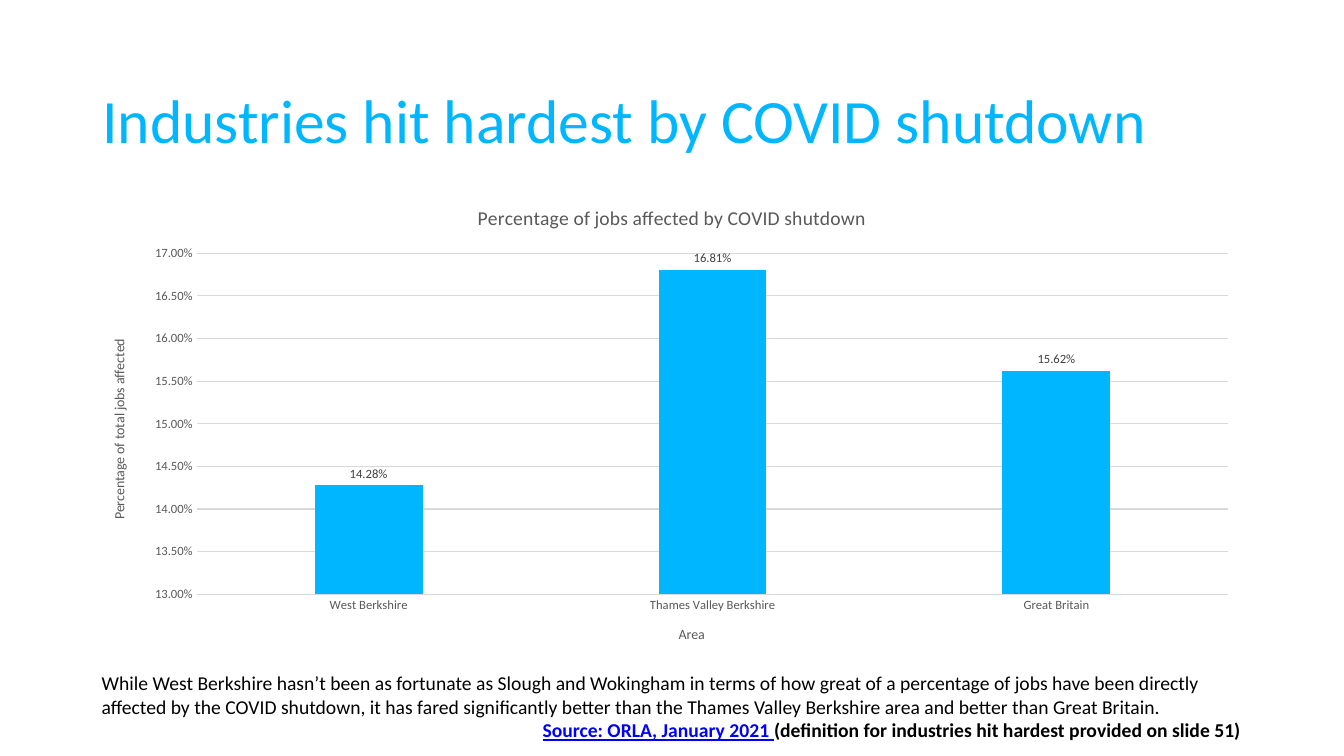
from dataclasses import dataclass

import lxml.etree
import pptx
import pptx.chart.axis
import pptx.chart.chart
import pptx.chart.data
import pptx.dml.color
import pptx.enum.chart
import pptx.enum.text
import pptx.oxml
import pptx.oxml.ns
import pptx.slide
import pptx.text.text
import pptx.util

COLOURS = {
    "accent": "00B7FF",
    "body": "000000",
    "link": "0000FF",
    "axis": "595959",
    "label": "404040",
    "grid": "D9D9D9",
}
FONT_NAME = "Calibri"
PERCENT_FORMAT = "0.00%"
JOBS_AFFECTED = {
    "West Berkshire": 0.1428,
    "Thames Valley Berkshire": 0.1681,
    "Great Britain": 0.1562,
}


@dataclass
class Box:
    left: float
    top: float
    width: float
    height: float

    def lengths(self) -> list[pptx.util.Length]:
        return [pptx.util.Pt(value) for value in (self.left, self.top, self.width, self.height)]


def colour(name: str) -> pptx.dml.color.RGBColor:
    return pptx.dml.color.RGBColor.from_string(COLOURS[name])


def format_font(
    font: pptx.text.text.Font, *, size: float, color: str, bold: bool = False, underline: bool = False
) -> None:
    font.name = FONT_NAME
    font.size = pptx.util.Pt(size)
    font.bold = bold
    font.underline = underline
    font.color.rgb = colour(color)


def add_text(paragraph, text: str, **formatting) -> None:
    run = paragraph.add_run()
    run.text = text
    format_font(run.font, **formatting)


def add_text_frame(
    slide: pptx.slide.Slide, box: Box, anchor: pptx.enum.text.MSO_ANCHOR
) -> pptx.text.text.TextFrame:
    text_frame = slide.shapes.add_textbox(*box.lengths()).text_frame
    text_frame.word_wrap = True
    text_frame.vertical_anchor = anchor
    return text_frame


def style_axis(axis: pptx.chart.axis._BaseAxis, title: str) -> None:
    axis.major_tick_mark = pptx.enum.chart.XL_TICK_MARK.NONE
    axis.minor_tick_mark = pptx.enum.chart.XL_TICK_MARK.NONE
    format_font(axis.tick_labels.font, size=9, color="axis")
    add_text(axis.axis_title.text_frame.paragraphs[0], title, size=10, color="axis")


def style_line(line, color: str) -> None:
    line.color.rgb = colour(color)
    line.width = pptx.util.Pt(0.75)


def place_plot_area(chart: pptx.chart.chart.Chart, **fractions: float) -> None:
    plot_area = chart.element.chart.plotArea
    for old_layout in plot_area.findall(pptx.oxml.ns.qn("c:layout")):
        plot_area.remove(old_layout)
    layout = lxml.etree.Element(pptx.oxml.ns.qn("c:layout"))
    manual = lxml.etree.SubElement(layout, pptx.oxml.ns.qn("c:manualLayout"))
    settings = {"layoutTarget": "inner", "xMode": "edge", "yMode": "edge", **fractions}
    for tag, value in settings.items():
        lxml.etree.SubElement(manual, pptx.oxml.ns.qn(f"c:{tag}")).set("val", str(value))
    plot_area.insert(0, layout)


def add_jobs_chart(slide: pptx.slide.Slide, box: Box) -> None:
    data = pptx.chart.data.CategoryChartData(number_format=PERCENT_FORMAT)
    data.categories = list(JOBS_AFFECTED)
    data.add_series("Series 1", list(JOBS_AFFECTED.values()))
    chart = slide.shapes.add_chart(
        pptx.enum.chart.XL_CHART_TYPE.COLUMN_CLUSTERED, *box.lengths(), data
    ).chart
    format_font(chart.font, size=10, color="body")
    chart.has_legend = False
    add_text(
        chart.chart_title.text_frame.paragraphs[0],
        "Percentage of jobs affected by COVID shutdown",
        size=14,
        color="axis",
    )
    chart.chart_title.include_in_layout = False

    style_axis(chart.category_axis, "Area")
    style_line(chart.category_axis.format.line, "grid")

    value_axis = chart.value_axis
    style_axis(value_axis, "Percentage of total jobs affected")
    value_axis.minimum_scale = 0.13
    value_axis.maximum_scale = 0.17
    value_axis.major_unit = 0.005
    value_axis.tick_labels.number_format = PERCENT_FORMAT
    value_axis.tick_labels.number_format_is_linked = False
    value_axis.format.line.fill.background()
    style_line(value_axis.major_gridlines.format.line, "grid")

    plot = chart.plots[0]
    plot.gap_width = 219
    plot.overlap = -27
    plot.vary_by_categories = False
    series = plot.series[0]
    series.format.fill.solid()
    series.format.fill.fore_color.rgb = colour("accent")
    labels = series.data_labels
    labels.show_value = True
    labels.position = pptx.enum.chart.XL_LABEL_POSITION.OUTSIDE_END
    labels.number_format = PERCENT_FORMAT
    labels.number_format_is_linked = False
    format_font(labels.font, size=9, color="label")
    place_plot_area(chart, x=0.09, y=0.14, w=0.89, h=0.71)


def main() -> None:
    presentation = pptx.Presentation()
    presentation.slide_width = pptx.util.Pt(960)
    presentation.slide_height = pptx.util.Pt(540)
    slide = presentation.slides.add_slide(presentation.slide_layouts[6])

    title_frame = add_text_frame(slide, Box(66, 44, 828, 89), pptx.enum.text.MSO_ANCHOR.MIDDLE)
    title = title_frame.paragraphs[0]
    title.line_spacing = 0.9
    add_text(title, "Industries hit hardest by COVID shutdown", size=44, color="accent")

    add_jobs_chart(slide, Box(66, 133, 828, 343))

    commentary_frame = add_text_frame(slide, Box(65.5, 476, 828, 58), pptx.enum.text.MSO_ANCHOR.TOP)
    add_text(
        commentary_frame.paragraphs[0],
        "While West Berkshire hasn’t been as fortunate as Slough and Wokingham in terms of how great "
        "of a percentage of jobs have been directly affected by the COVID shutdown, it has fared "
        "significantly better than the Thames Valley Berkshire area and better than Great Britain.",
        size=14,
        color="body",
    )
    source = commentary_frame.add_paragraph()
    source.alignment = pptx.enum.text.PP_ALIGN.RIGHT
    add_text(source, "Source: ORLA, January 2021 ", size=14, color="link", bold=True, underline=True)
    add_text(
        source,
        "(definition for industries hit hardest provided on slide 51)",
        size=14,
        color="body",
        bold=True,
    )

    presentation.save("out.pptx")


if __name__ == "__main__":
    main()
